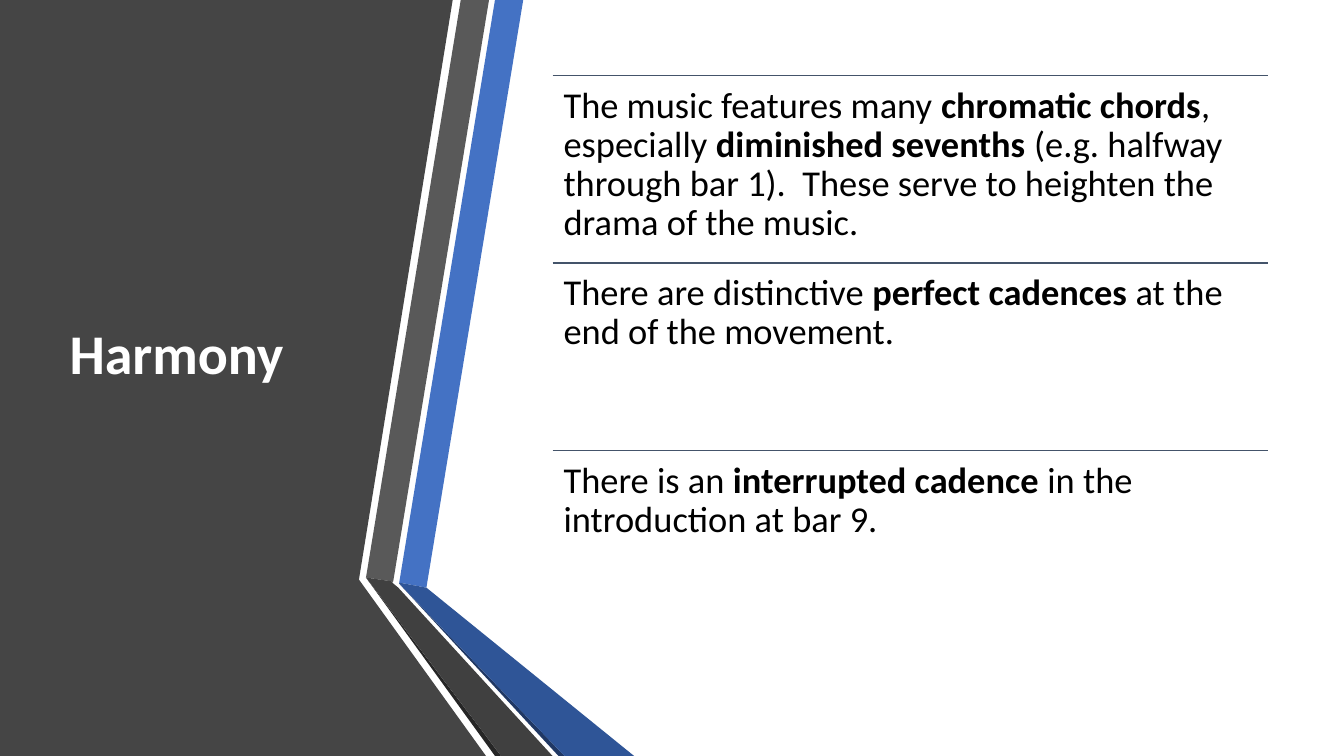
from lxml import etree
from pptx import Presentation
from pptx.dml.color import RGBColor
from pptx.enum.shapes import MSO_CONNECTOR
from pptx.enum.text import MSO_ANCHOR, MSO_AUTO_SIZE, PP_ALIGN
from pptx.oxml.ns import qn
from pptx.util import Pt

PX = 9144
STRAIGHT = MSO_CONNECTOR.STRAIGHT
TOP, MIDDLE = MSO_ANCHOR.TOP, MSO_ANCHOR.MIDDLE
LEFT = PP_ALIGN.LEFT
NO_AUTOFIT = MSO_AUTO_SIZE.NONE
TITLE_ONLY = 5

FONT = "Calibri"
WHITE, BLACK, RULE = "FFFFFF", "000000", "44546A"
ITEM_INSET = 11

SLIDE_BOX = (0, 0, 1333, 750)
TITLE_BOX = (59, 75, 304, 558)
RIBBON_BOX = (363, 0, 266, 750)
LIST_BOX = (548, 75, 710, 558)

PANEL = [(0, 0), (353, 0), (449, 0), (356, 575), (482, 750), (0, 750)]
RIBBONS = [
    ("4472C4", [(33, 578), (60, 583), (156, 0), (128, 0)]),
    ("595959", [(122, 0), (94, 0), (0, 573), (27, 577)]),
    ("262626", [(0, 573), (128, 750), (134, 750)]),
    ("203864", [(33, 579), (191, 750), (197, 750)]),
    ("2F5597", [(33, 579), (197, 750), (266, 750), (60, 583), (33, 578)]),
    ("404040", [(185, 750), (32, 583), (26, 578), (27, 577), (0, 573), (134, 750)]),
]
ITEMS = [
    [("The music features many ", False), ("chromatic chords", True),
     (", especially ", False), ("diminished sevenths ", True),
     ("(e.g. halfway through bar 1).  These serve to heighten the drama of the music.", False)],
    [("There are distinctive ", False), ("perfect cadences ", True),
     ("at the end of the movement.", False)],
    [("There is an ", False), ("interrupted cadence ", True),
     ("in the introduction at bar 9.", False)],
]


def color(hex_string):
    return RGBColor.from_string(hex_string)


def place(shape, box):
    shape.left, shape.top, shape.width, shape.height = (value * PX for value in box)


def bring_to_front(shape):
    shape.element.getparent().append(shape.element)


def add_polygon(slide, box, points, fill):
    left, top = box[:2]
    builder = slide.shapes.build_freeform(*points[0], scale=PX)
    builder.add_line_segments(points[1:], close=True)
    shape = builder.convert_to_shape(left * PX, top * PX)
    shape.shadow.inherit = False
    shape.fill.solid()
    shape.fill.fore_color.rgb = color(fill)
    shape.line.fill.background()


def write_text(frame, runs, size, text_color, anchor):
    frame.word_wrap = True
    frame.auto_size = NO_AUTOFIT
    frame.vertical_anchor = anchor
    paragraph = frame.paragraphs[0]
    paragraph.alignment = LEFT
    paragraph.line_spacing = 0.9
    for text, bold in runs:
        run = paragraph.add_run()
        run.text = text
        run.font.name = FONT
        run.font.size = Pt(size)
        run.font.bold = bold
        run.font.color.rgb = color(text_color)


def add_rule(slide, left, top, width):
    rule = slide.shapes.add_connector(
        STRAIGHT, left * PX, top * PX, (left + width) * PX, top * PX)
    rule.line.color.rgb = color(RULE)
    rule.line.width = Pt(1)
    etree.SubElement(rule.element.spPr, qn("a:effectLst"))


def add_ribbons(slide, box):
    for fill, points in RIBBONS:
        add_polygon(slide, box, points, fill)


def add_title(slide, box):
    title = slide.shapes.title
    place(title, box)
    bring_to_front(title)
    write_text(title.text_frame, [("Harmony", True)], 40, WHITE, MIDDLE)


def add_list(slide, box):
    left, top, width, height = box
    row_height = height // len(ITEMS)
    for index, runs in enumerate(ITEMS):
        row_top = top + index * row_height
        add_rule(slide, left, row_top, width)
        item = slide.shapes.add_textbox(0, 0, 0, 0)
        place(item, (left, row_top, width, row_height))
        frame = item.text_frame
        frame.margin_left = frame.margin_right = ITEM_INSET * PX
        frame.margin_top = frame.margin_bottom = ITEM_INSET * PX
        write_text(frame, runs, 26, BLACK, TOP)


def main():
    presentation = Presentation()
    presentation.slide_width, presentation.slide_height = (
        value * PX for value in SLIDE_BOX[2:])
    slide = presentation.slides.add_slide(presentation.slide_layouts[TITLE_ONLY])
    add_polygon(slide, SLIDE_BOX, PANEL, "454545")
    add_ribbons(slide, RIBBON_BOX)
    add_title(slide, TITLE_BOX)
    add_list(slide, LIST_BOX)
    presentation.save("out.pptx")


if __name__ == "__main__":
    main()
